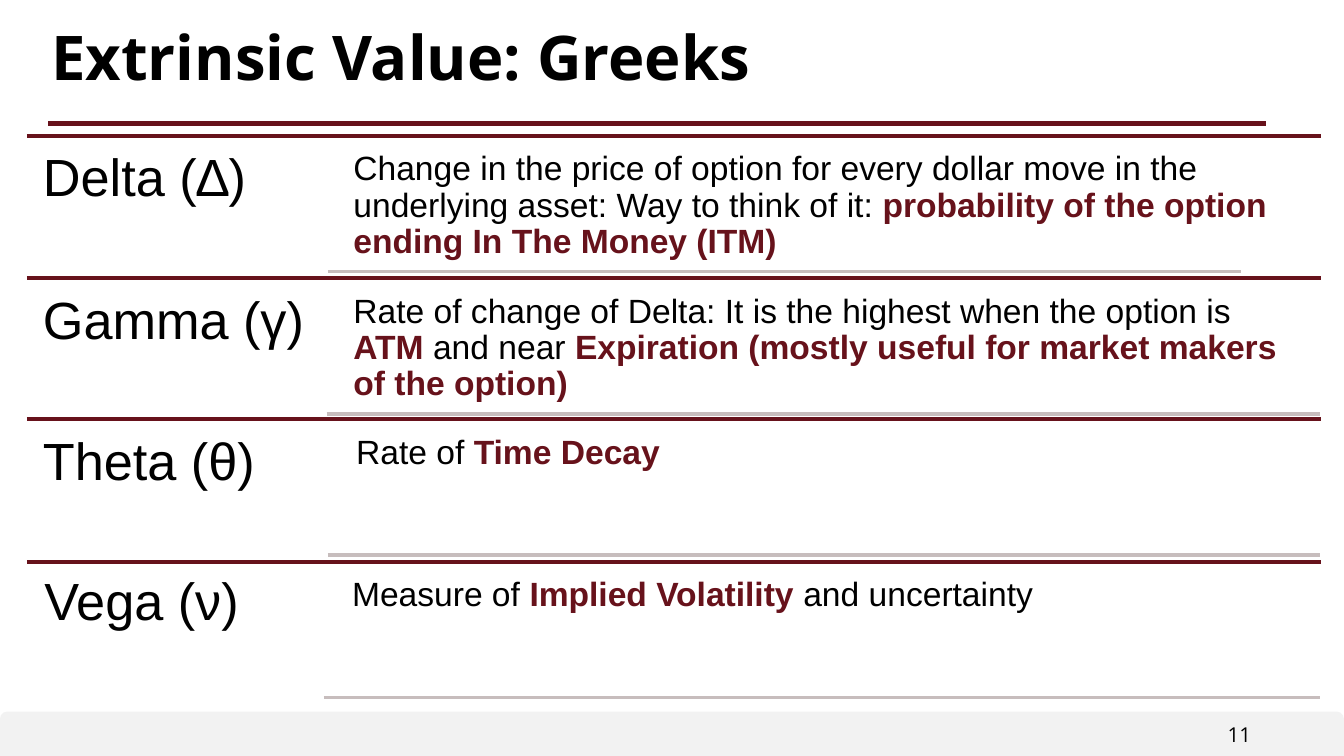
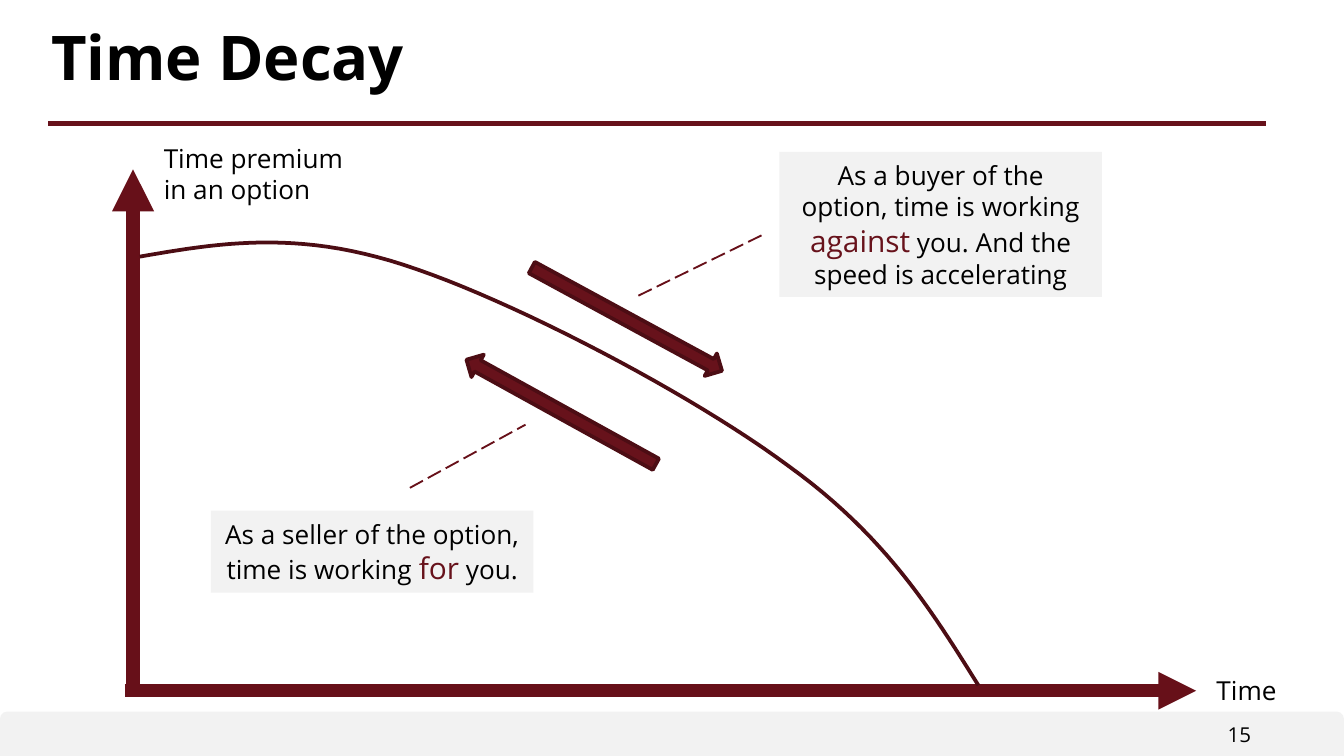
from lxml.etree import SubElement
from pptx import Presentation
from pptx.dml.color import RGBColor
from pptx.enum.dml import MSO_LINE
from pptx.enum.shapes import MSO_CONNECTOR, MSO_SHAPE
from pptx.enum.text import PP_ALIGN
from pptx.oxml.ns import qn
from pptx.util import Pt

PX = 9144  # EMU per px, 100 px to the inch
WIDTH = 1000
HEIGHT = WIDTH * 9 / 16
BAND = 33

BLACK = RGBColor(0x00, 0x00, 0x00)
WHITE = RGBColor(0xFF, 0xFF, 0xFF)
MAROON = RGBColor(0x67, 0x12, 0x1B)
AXIS_RED = RGBColor(0x67, 0x10, 0x19)
DARK_RED = RGBColor(0x4C, 0x0D, 0x14)
PALE_GREY = RGBColor(0xF2, 0xF2, 0xF2)
RULE_GREY = RGBColor(0xC7, 0xBD, 0xBD)

HEADING_FONT = "Open Sans"
TABLE_FONT = "Arial"

# Label, label box (left, drop, width), text box (left, width),
# grey rule (start, end), description with *emphasis*
GREEKS = [
    ("Delta (∆)", (0, 0, 224), (236, 726), (224, 903),
     "Change in the price of option for every dollar move in the underlying asset: "
     "Way to think of it: *probability of the option ending In The Money (ITM)*"),
    ("Gamma (γ)", (0, 0, 223), (236, 724), (223, 962),
     "Rate of change of Delta: It is the highest when the option is *ATM *and near "
     "*Expiration (mostly useful for market makers of the option)*"),
    ("Theta (θ)", (0, 0, 224), (238, 724), (224, 962), "Rate of *Time Decay*"),
    ("Vega (ν)", (1, -2, 221), (235, 727), (221, 962),
     "Measure of *Implied Volatility* and uncertainty"),
]

# Start point, then three points for each Bézier piece
DECAY_CURVE = [(5, 65), (63, 55), (121, 45), (201, 71), (282, 97), (417, 168),
               (488, 221), (560, 273), (594, 328), (629, 384)]


def px(*lengths):
    return [round(length * PX) for length in lengths]


def write(box, paragraphs, size, font=HEADING_FONT, align=PP_ALIGN.LEFT, insets=(10, 5),
          spacing=None, bold=False, strong_size=None):
    """Fill a box; text between asterisks is maroon, and bold or larger."""
    frame = box.text_frame
    frame.word_wrap = True
    frame.margin_left = frame.margin_right = insets[0] * PX
    frame.margin_top = frame.margin_bottom = insets[1] * PX
    for index, text in enumerate(paragraphs):
        para = frame.add_paragraph() if index else frame.paragraphs[0]
        para.alignment = align
        if spacing:
            para.line_spacing = spacing
        para.font.name = font
        para.font.size = Pt(size)
        para.font.bold = bold
        para.font.color.rgb = BLACK
        for part, piece in enumerate(text.split("*")):
            if not piece:
                continue
            span = para.add_run()
            span.text = piece
            if part % 2:
                span.font.color.rgb = MAROON
                if strong_size:
                    span.font.size = Pt(strong_size)
                else:
                    span.font.bold = True


def add_text(page, box, paragraphs, size, **style):
    write(page.shapes.add_textbox(*px(*box)), paragraphs, size, **style)


def add_line(page, start, end, color, width, dashed=False, arrow=False):
    line = page.shapes.add_connector(MSO_CONNECTOR.STRAIGHT, *px(*start, *end))
    line.line.color.rgb = color
    line.line.width = Pt(width)
    if dashed:
        line.line.dash_style = MSO_LINE.LONG_DASH
    if arrow:
        SubElement(line.line._get_or_add_ln(), qn("a:tailEnd"), type="triangle")
    SubElement(line._element.spPr, qn("a:effectLst"))


def add_block(page, kind, box, fill, outline=None):
    block = page.shapes.add_shape(kind, *px(*box))
    block.shadow.inherit = False
    block.fill.solid()
    block.fill.fore_color.rgb = fill
    if outline:
        block.line.color.rgb = outline
        block.line.width = Pt(2)
    else:
        block.line.fill.background()
    return block


def add_page(deck, title, number):
    page = deck.slides.add_slide(deck.slide_layouts[6])
    page.background.fill.solid()
    page.background.fill.fore_color.rgb = WHITE
    # Footer band and page number
    add_block(page, MSO_SHAPE.ROUND_2_SAME_RECTANGLE, (0, HEIGHT - BAND, WIDTH, BAND), PALE_GREY)
    add_text(page, (812, 533, 127, 25), [number], 11, align=PP_ALIGN.RIGHT, insets=(8, 4))
    # Title and its rule
    add_line(page, (36, 92), (942, 92), MAROON, 2.5)
    add_text(page, (30, 16, 931, 68), [title], 33, insets=(8, 4), spacing=0.9, bold=True)
    return page


def greek_rows(page, left, top, width, height):
    pitch = height / len(GREEKS)
    for index, (label, label_box, text_box, rule, text) in enumerate(GREEKS):
        row = round(top + index * pitch)
        add_line(page, (left, row), (left + width, row), MAROON, 2)
        indent, drop, label_width = label_box
        add_text(page, (left + indent, row + drop, label_width, 106), [label], 28,
                 font=TABLE_FONT, insets=(12, 12), spacing=0.9)
        indent, text_width = text_box
        add_text(page, (left + indent, row + 5, text_width, 96), [text], 18,
                 font=TABLE_FONT, insets=(7, 7), spacing=0.9)
        start, end = rule
        add_line(page, (left + start, row + 101), (left + end, row + 101), RULE_GREY, 2)


def curve_points(controls, steps=24):
    for first in range(0, len(controls) - 1, 3):
        piece = controls[first:first + 4]
        for step in range(1, steps + 1):
            t = step / steps
            weights = ((1 - t) ** 3, 3 * t * (1 - t) ** 2, 3 * t * t * (1 - t), t ** 3)
            yield tuple(sum(w * point[axis] for w, point in zip(weights, piece))
                        for axis in (0, 1))


def decay_plot(page, left, top):
    def at(x, y):
        return left + x, top + y

    # Axes
    add_line(page, at(0, 391), at(0, 0), AXIS_RED, 7.5, arrow=True)
    add_line(page, at(-6, 388), at(791, 388), AXIS_RED, 6.75, arrow=True)
    # Premium curve
    builder = page.shapes.build_freeform(*px(*at(*DECAY_CURVE[0])), scale=1.0)
    builder.add_line_segments([px(*at(*point)) for point in curve_points(DECAY_CURVE)],
                              close=False)
    curve = builder.convert_to_shape()
    curve.shadow.inherit = False
    curve.fill.background()
    curve.line.color.rgb = DARK_RED
    curve.line.width = Pt(2)
    # Axis labels
    add_text(page, (*at(13, -25), 192, 57), ["Time premium", "in an option"], 14)
    add_text(page, (*at(783, 371), 91, 34), ["Time"], 14, align=PP_ALIGN.CENTER)
    # Direction arrows
    for x, y, turn in ((287, 102, 28.5), (238, 171, 208.9)):
        arrow = add_block(page, MSO_SHAPE.RIGHT_ARROW, (*at(x, y), 161, 19), MAROON, DARK_RED)
        arrow.rotation = turn


def callout(page, left, top, height, text, leader):
    box = add_block(page, MSO_SHAPE.RECTANGLE, (left, top, 240, height), PALE_GREY)
    write(box, [text], 14, align=PP_ALIGN.CENTER, strong_size=16)
    start, end = [(left + x, top + y) for x, y in leader]
    add_line(page, start, end, AXIS_RED, 1, dashed=True)


def main():
    deck = Presentation()
    deck.slide_width, deck.slide_height = px(WIDTH, HEIGHT)

    greeks = add_page(deck, "Extrinsic Value: Greeks", "11")
    greek_rows(greeks, 20, 101, 963, 423)

    decay = add_page(deck, "Time Decay", "15")
    decay_plot(decay, 99, 126)
    callout(decay, 580, 113, 108,
            "As a buyer of the option, time is working *against* you. "
            "And the speed is accelerating", ((-105, 107), (-11, 61)))
    callout(decay, 157, 380, 61,
            "As a seller of the option, time is working *for* you.",
            ((148, -17), (234, -64)))

    deck.save("out.pptx")


if __name__ == "__main__":
    main()
